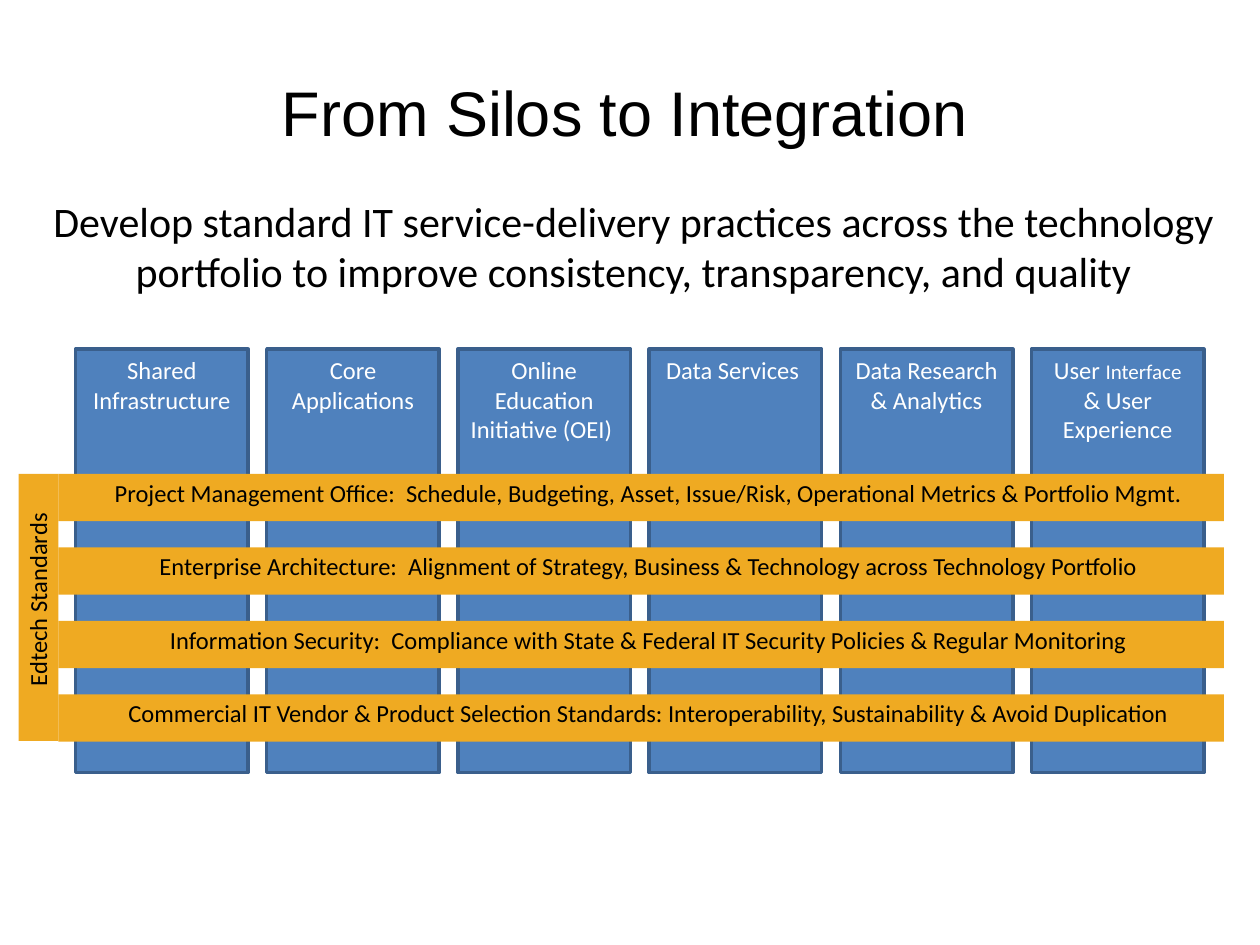
from lxml import etree
from pptx import Presentation
from pptx.dml.color import RGBColor
from pptx.enum.shapes import MSO_SHAPE
from pptx.enum.text import MSO_ANCHOR, MSO_AUTO_SIZE, PP_ALIGN
from pptx.oxml.ns import qn
from pptx.util import Pt

RECT = MSO_SHAPE.RECTANGLE
TOP = MSO_ANCHOR.TOP
CENTER = PP_ALIGN.CENTER
NO_FIT = MSO_AUTO_SIZE.NONE

COLORS = {
    "silo": "4F81BD",
    "silo_line": "3A5F8C",
    "bar": "EFAA22",
    "white": "FFFFFF",
    "black": "000000",
}

SILOS = [
    [("Shared Infrastructure", 14)],
    [("Core Applications", 14)],
    [("Online Education Initiative (OEI) ", 14)],
    [("Data Services ", 14)],
    [("Data Research & Analytics", 14)],
    [("User ", 14), ("Interface", 12), (" & User Experience", 14)],
]
SILO_LEFT, SILO_TOP, SILO_W, SILO_H, SILO_STEP = 43.2, 199.5, 98.6, 242, 109.25

PRACTICES = [
    "Project Management Office:  Schedule, Budgeting, Asset, Issue/Risk, "
    "Operational Metrics & Portfolio Mgmt.",
    "Enterprise Architecture:  Alignment of Strategy, Business & Technology "
    "across Technology Portfolio",
    "Information Security:  Compliance with State & Federal IT Security "
    "Policies & Regular Monitoring",
    "Commercial IT Vendor & Product Selection Standards: Interoperability, "
    "Sustainability & Avoid Duplication",
]
BAR_LEFT, BAR_TOP, BAR_W, BAR_H, BAR_STEP = 33.4, 270.8, 666, 27.1, 42


def rgb(name):
    return RGBColor.from_string(COLORS[name])


def place(sp, left, top, width, height):
    sp.left, sp.top, sp.width, sp.height = map(Pt, (left, top, width, height))


def write(sp, runs, color="black", font="Calibri", inset=(7.2, 3.6), indent=None):
    """Fill a shape with one centred paragraph; an indent marks list text."""
    tf = sp.text_frame
    tf.word_wrap = True
    tf.auto_size = NO_FIT
    tf.vertical_anchor = TOP
    tf.margin_left = tf.margin_right = Pt(inset[0])
    tf.margin_top = tf.margin_bottom = Pt(inset[1])
    p = tf.paragraphs[0]
    p.alignment = CENTER
    p.space_before = Pt(0)
    if indent is not None:
        p.space_after = Pt(6)
        pPr = p._p.get_or_add_pPr()
        pPr.set("marL", str(Pt(indent)))
        pPr.set("indent", "0")
        etree.SubElement(pPr, qn("a:buNone"))
    for text, size in runs:
        r = p.add_run()
        r.text = text
        r.font.name = font
        r.font.size = Pt(size)
        r.font.color.rgb = rgb(color)


def add_box(s, at, fill, line=None):
    sp = s.shapes.add_shape(RECT, *map(Pt, at))
    sp.shadow.inherit = False
    sp.fill.solid()
    sp.fill.fore_color.rgb = rgb(fill)
    if line:
        sp.line.color.rgb = rgb(line)
        sp.line.width = Pt(2)
    else:
        sp.line.fill.background()
    return sp


def add_silo(s, left, runs):
    sp = add_box(s, (left, SILO_TOP, SILO_W, SILO_H), "silo", "silo_line")
    write(sp, runs, color="white")


def add_bar(s, at, text, rotation=0):
    sp = add_box(s, at, "bar")
    sp.rotation = rotation
    write(sp, [(text, 14)], inset=(3.6, 2.2), indent=8.64)


def main():
    prs = Presentation()
    prs.slide_width, prs.slide_height = Pt(720), Pt(540)
    s = prs.slides.add_slide(prs.slide_layouts[1])

    title, body = s.placeholders
    place(title, 33.1, 34.6, 648, 90)
    write(title, [("From Silos to Integration", 36)], font="Arial", inset=(7.2, 7.6))
    place(body, -2.2, 108, 720, 338.4)
    write(body, [("Develop standard IT service-delivery practices across the "
                  "technology portfolio to improve consistency, transparency, "
                  "and quality", 24)], indent=8.64)

    for i, runs in enumerate(SILOS):
        add_silo(s, SILO_LEFT + i * SILO_STEP, runs)
    for i, text in enumerate(PRACTICES):
        add_bar(s, (BAR_LEFT, BAR_TOP + i * BAR_STEP, BAR_W, BAR_H), text)
    add_bar(s, (-54.2, 335.6, 152.6, 22.8), "Edtech Standards", rotation=270)

    prs.save("out.pptx")


if __name__ == "__main__":
    main()
